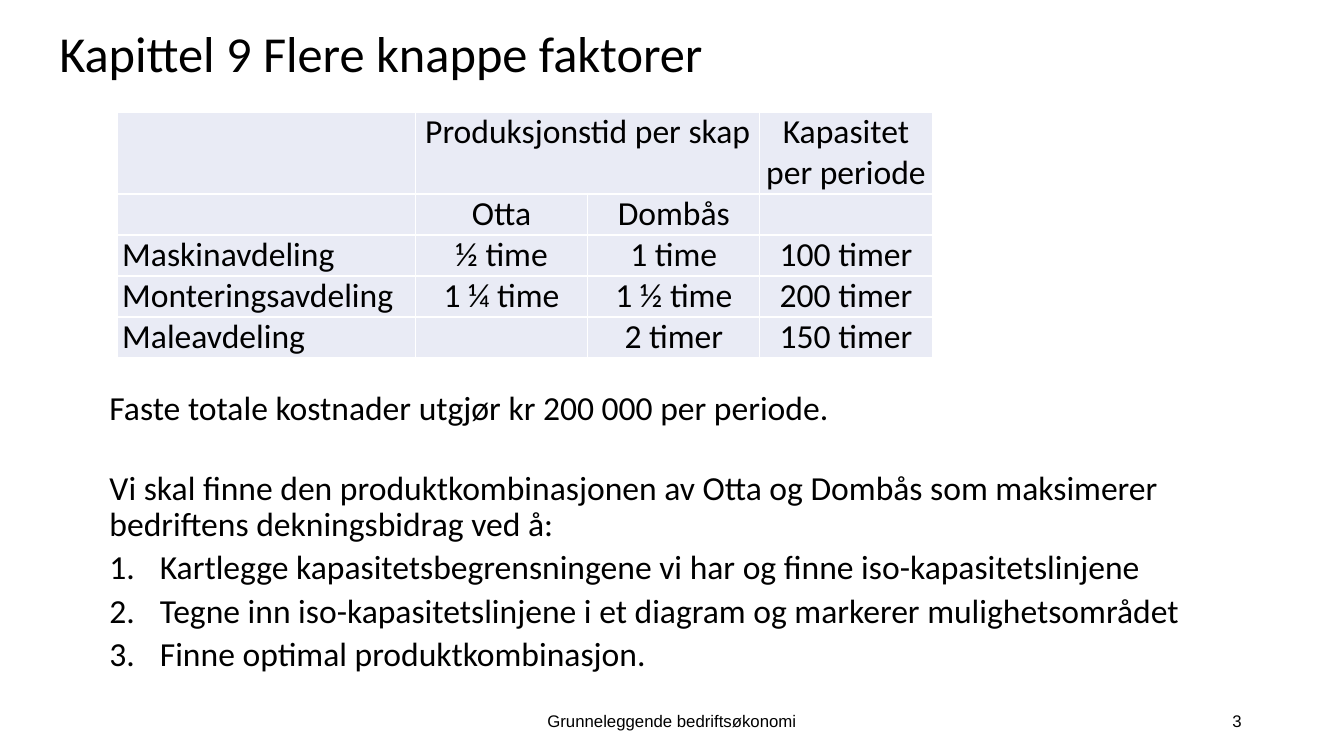
from pptx import Presentation
from pptx.dml.color import RGBColor
from pptx.enum.text import MSO_ANCHOR, PP_ALIGN
from pptx.util import Cm, Pt
from lxml.etree import SubElement
from pptx.oxml.ns import qn


def format_paragraph(para, size, font="Calibri", align=PP_ALIGN.LEFT, color="000000"):
    para.alignment = align
    para.font.name = font
    para.font.size = Pt(size)
    para.font.color.rgb = RGBColor.from_string(color)


deck = Presentation()
deck.slide_width = Cm(33.87)
deck.slide_height = Cm(19.05)
page = deck.slides.add_slide(deck.slide_layouts[5])

title = page.shapes.title
title.left, title.top, title.width, title.height = Cm(1.24), Cm(0), Cm(22.86), Cm(2.82)
title.text_frame.text = "Kapittel 9 Flere knappe faktorer"
title.text_frame.vertical_anchor = MSO_ANCHOR.MIDDLE
title_para = title.text_frame.paragraphs[0]
format_paragraph(title_para, 36)
title_para.line_spacing = 0.9

rows = [
    ["", "Produksjonstid per skap", "", "Kapasitet per periode"],
    ["", "Otta", "Dombås", ""],
    ["Maskinavdeling", "½ time", "1 time", "100 timer"],
    ["Monteringsavdeling", "1 ¼ time", "1 ½ time", "200 timer"],
    ["Maleavdeling", "", "2 timer", "150 timer"],
]
column_widths = [7.52, 4.34, 4.34, 4.34]
row_heights = [2.06, 1.03, 1.03, 1.03, 1.03]
table = page.shapes.add_table(
    len(rows), len(column_widths), Cm(2.95), Cm(2.82),
    Cm(sum(column_widths)), Cm(sum(row_heights))).table
table.first_row = False
table.horz_banding = False
for column, width in zip(table.columns, column_widths):
    column.width = Cm(width)
for row, height in zip(table.rows, row_heights):
    row.height = Cm(height)
for row_index, texts in enumerate(rows):
    for column_index, text in enumerate(texts):
        cell = table.cell(row_index, column_index)
        cell.text = text
        cell.margin_left = cell.margin_right = Cm(0.13)
        cell.margin_top = cell.margin_bottom = Cm(0)
        cell.fill.solid()
        cell.fill.fore_color.rgb = RGBColor.from_string("E9EBF5")
        align = PP_ALIGN.CENTER if column_index else PP_ALIGN.LEFT
        format_paragraph(cell.text_frame.paragraphs[0], 24, align=align)
table.cell(0, 1).merge(table.cell(0, 2))

body = page.shapes.add_textbox(Cm(1.24), Cm(9.73), Cm(29.72), Cm(7.92)).text_frame
body.word_wrap = True
body_texts = [
    ("Faste totale kostnader utgjør kr 200 000 per periode.", 5, False),
    ("Vi skal finne den produktkombinasjonen av Otta og Dombås som maksimerer "
     "bedriftens dekningsbidrag ved å:", 31.5, False),
    ("Kartlegge kapasitetsbegrensningene vi har og finne iso-kapasitetslinjene", 5, True),
    ("Tegne inn iso-kapasitetslinjene i et diagram og markerer mulighetsområdet", 5, True),
    ("Finne optimal produktkombinasjon.", 5, True),
]
for index, (text, space_before, numbered) in enumerate(body_texts):
    para = body.add_paragraph() if index else body.paragraphs[0]
    para.text = text
    format_paragraph(para, 24)
    para.line_spacing = 0.9
    para.space_before = Pt(space_before)
    properties = para._p.get_or_add_pPr()
    properties.set("marL", str(Cm(2.54 if numbered else 1.27)))
    properties.set("indent", str(Cm(-1.27 if numbered else 0)))
    if numbered:
        numbering = SubElement(properties, qn("a:buAutoNum"), type="arabicPeriod")
        properties.find(qn("a:defRPr")).addprevious(numbering)

footers = [
    ("Grunneleggende bedriftsøkonomi", 11.22, 11.43, PP_ALIGN.CENTER),
    ("3", 23.92, 7.62, PP_ALIGN.RIGHT),
]
for text, left, width, align in footers:
    footer = page.shapes.add_textbox(Cm(left), Cm(17.65), Cm(width), Cm(1.01)).text_frame
    footer.word_wrap = True
    footer.vertical_anchor = MSO_ANCHOR.MIDDLE
    footer.text = text
    format_paragraph(footer.paragraphs[0], 12, font="Arial", align=align)

deck.save("out.pptx")
